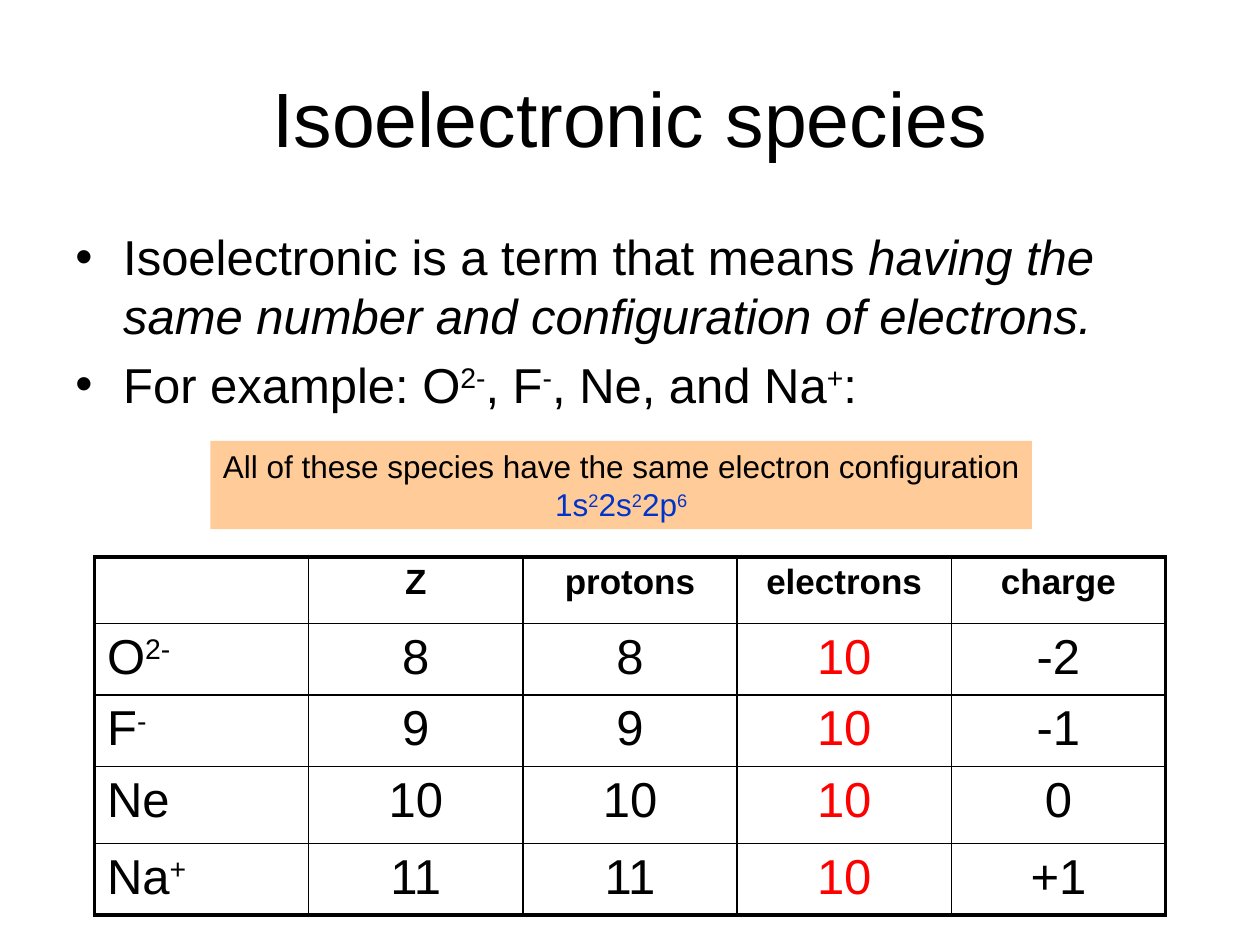
from lxml import etree
from pptx import Presentation
from pptx.dml.color import RGBColor
from pptx.enum.shapes import MSO_SHAPE
from pptx.enum.text import MSO_ANCHOR, PP_ALIGN
from pptx.oxml.ns import qn
from pptx.util import Inches, Pt

CENTER, LEFT = PP_ALIGN.CENTER, PP_ALIGN.LEFT
MIDDLE = MSO_ANCHOR.MIDDLE
RECT = MSO_SHAPE.RECTANGLE
BLACK, RED, BLUE, PEACH = "000000", "FF0000", "0033CC", "FFCC99"


def rgb(code):
    return RGBColor.from_string(code)


def write(para, text, size, color=BLACK, align=LEFT, bold=False):
    """Fill a paragraph; ^x^ marks a superscript and _x_ italics."""
    para.alignment = align
    mark = ""
    for part in text.replace("^", "|^|").replace("_", "|_|").split("|"):
        if part in ("^", "_"):
            mark = "" if mark else part
        elif part:
            run = para.add_run()
            run.text = part
            font = run.font
            font.name, font.size, font.bold = "Arial", Pt(size), bold
            font.color.rgb = rgb(color)
            if mark == "_":
                font.italic = True
            elif mark == "^":
                run._r.get_or_add_rPr().set("baseline", "30000")


prs = Presentation()
prs.slide_width, prs.slide_height = Inches(10), Inches(7.5)
slide = prs.slides.add_slide(prs.slide_layouts[6])
shapes = slide.shapes

# Title
box = shapes.add_textbox(Inches(0.5), Inches(0.3), Inches(9), Inches(1.25))
frame = box.text_frame
frame.word_wrap = True
frame.vertical_anchor = MIDDLE
write(frame.paragraphs[0], "Isoelectronic species", 44, align=CENTER)

# Bulleted text
points = [
    "Isoelectronic is a term that means "
    "_having the same number and configuration of electrons._",
    "For example: O^2-^, F^-^, Ne, and Na^+^:",
]
box = shapes.add_textbox(Inches(0.5), Inches(1.75), Inches(9), Inches(4.95))
frame = box.text_frame
frame.word_wrap = True
for i, point in enumerate(points):
    para = frame.add_paragraph() if i else frame.paragraphs[0]
    write(para, point, 28)
    para.space_before = Pt(5.6)
    props = para._p.get_or_add_pPr()
    props.set("marL", str(Inches(0.38)))
    props.set("indent", str(-Inches(0.38)))
    etree.SubElement(props, qn("a:buFont")).set("typeface", "Arial")
    etree.SubElement(props, qn("a:buChar")).set("char", "•")

# Table of species
rows = [
    ["", "Z", "protons", "electrons", "charge"],
    ["O^2-^", "8", "8", "10", "-2"],
    ["F^-^", "9", "9", "10", "-1"],
    ["Ne", "10", "10", "10", "0"],
    ["Na^+^", "11", "11", "10", "+1"],
]
heights = [0.53, 0.53, 0.53, 0.61, 0.54]
last = len(rows) - 1
table = shapes.add_table(5, 5, Inches(0.75), Inches(4.42),
                         Inches(8.5), Inches(sum(heights))).table
table.first_row = table.horz_banding = False
for col in table.columns:
    col.width = Inches(1.7)
for r, row in enumerate(rows):
    table.rows[r].height = Inches(heights[r])
    for c, text in enumerate(row):
        cell = table.cell(r, c)
        head = r == 0
        write(cell.text_frame.paragraphs[0], text, 20 if head else 28,
              RED if c == 3 and not head else BLACK,
              CENTER if c else LEFT, head)
        # Thick outer frame, thin inner lines
        props = cell._tc.get_or_add_tcPr()
        outer = {"L": c == 0, "R": c == last, "T": r == 0, "B": r == last}
        for side, thick in outer.items():
            line = etree.SubElement(props, qn("a:ln" + side))
            line.set("w", str(Pt(2.25 if thick else 1)))
            fill = etree.SubElement(line, qn("a:solidFill"))
            etree.SubElement(fill, qn("a:srgbClr")).set("val", BLACK)
        cell.fill.background()

# Electron configuration note
note = shapes.add_shape(RECT, Inches(1.67), Inches(3.5),
                        Inches(6.52), Inches(0.7))
note.shadow.inherit = False
note.fill.solid()
note.fill.fore_color.rgb = rgb(PEACH)
note.line.fill.background()
frame = note.text_frame
frame.word_wrap = False
frame.vertical_anchor = MSO_ANCHOR.TOP
write(frame.paragraphs[0],
      "All of these species have the same electron configuration",
      18, align=CENTER)
write(frame.add_paragraph(), "1s^2^2s^2^2p^6^", 18, BLUE, CENTER)

prs.save("out.pptx")
